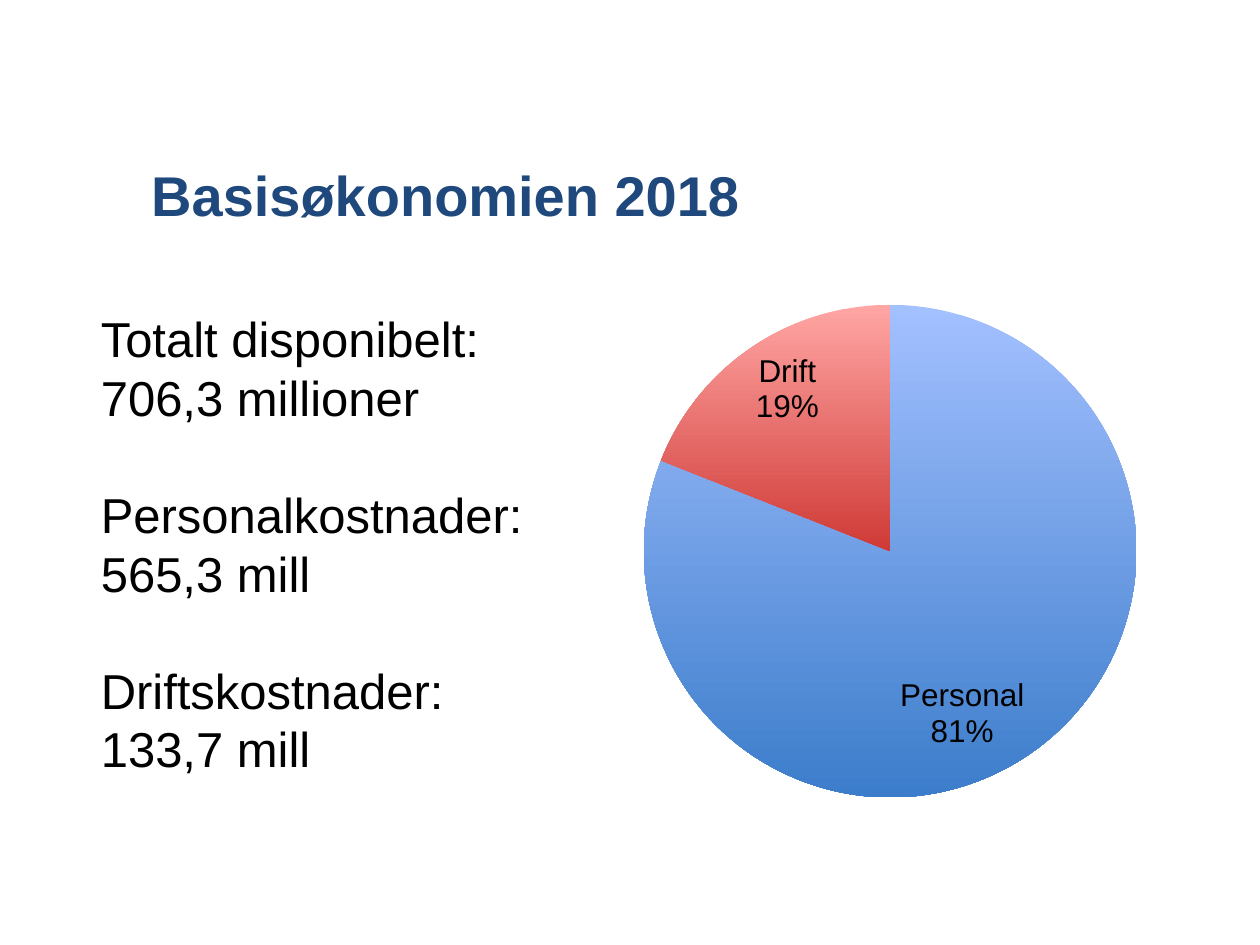
from lxml.etree import SubElement
from pptx import Presentation
from pptx.chart.data import CategoryChartData
from pptx.dml.color import RGBColor
from pptx.enum.chart import XL_CHART_TYPE, XL_LABEL_POSITION
from pptx.enum.text import MSO_ANCHOR, MSO_AUTO_SIZE, PP_ALIGN
from pptx.oxml import parse_xml
from pptx.oxml.ns import nsdecls, qn
from pptx.util import Inches, Pt

NAVY = RGBColor(0x1F, 0x49, 0x7D)
BLACK = RGBColor(0, 0, 0)
BLUES = RGBColor(0xA3, 0xC0, 0xFF), RGBColor(0x3C, 0x7D, 0xCB)
REDS = RGBColor(0xFF, 0xA6, 0xA4), RGBColor(0xCF, 0x3A, 0x36)
FACE = "Arial"
WIDE, HIGH = Inches(10), Inches(7.5)
LINE = Pt(33.5)
COSTS = (
    "Totalt disponibelt: 706,3 millioner",
    "Personalkostnader: 565,3 mill",
    "Driftskostnader: \v133,7 mill",
)


def area(left, top, width, height):
    """Turn shares of the slide's size into lengths."""
    return int(left * WIDE), int(top * HIGH), int(width * WIDE), int(height * HIGH)


def place(shape, box):
    """Move a placeholder to a box."""
    shape.left, shape.top, shape.width, shape.height = box


def style(font, size, color, bold=False):
    """Set the face, size, colour and weight of a font."""
    font.name, font.size, font.bold = FACE, Pt(size), bold
    font.color.rgb = color


def add_title(slide, text, box):
    """Fill the title placeholder."""
    title = slide.shapes.title
    place(title, box)
    frame = title.text_frame
    frame.text = text
    frame.vertical_anchor = MSO_ANCHOR.MIDDLE
    para = frame.paragraphs[0]
    para.alignment = PP_ALIGN.LEFT
    style(para.runs[0].font, 32, NAVY, True)


def add_list(slide, items, box):
    """Fill the body placeholder with unmarked paragraphs a line apart."""
    body = slide.placeholders[1]
    place(body, box)
    frame = body.text_frame
    frame.auto_size = MSO_AUTO_SIZE.NONE
    for row, item in enumerate(items):
        para = frame.add_paragraph() if row else frame.paragraphs[0]
        para.text = item
        para.line_spacing = LINE
        para.space_before = LINE if row else Pt(0)
        props = para._p.get_or_add_pPr()
        props.set("marL", "0")
        props.set("indent", "0")
        SubElement(props, qn("a:buNone"))
        for run in para.runs:
            style(run.font, 28, BLACK)


def set_plot(chart, **shares):
    """Fix the inner plot area as shares of the chart."""
    parts = "".join(f'<c:{key} val="{val}"/>' for key, val in shares.items())
    area_xml = chart._chartSpace.chart.plotArea
    for old in area_xml.findall(qn("c:layout")):
        area_xml.remove(old)
    area_xml.insert(0, parse_xml(
        f'<c:layout {nsdecls("c")}><c:manualLayout><c:layoutTarget val="inner"/>'
        f'<c:xMode val="edge"/><c:yMode val="edge"/>{parts}'
        '</c:manualLayout></c:layout>'))


def add_pie(slide, parts, tones, box):
    """Add a pie with shaded slices and labels inside them."""
    data = CategoryChartData(number_format="#,##0")
    data.categories = list(parts)
    data.add_series("Series 1", list(parts.values()))
    chart = slide.shapes.add_chart(XL_CHART_TYPE.PIE, *box, data).chart
    chart.has_title = chart.has_legend = False
    style(chart.font, 18, BLACK)
    set_plot(chart, x=0.26, y=0.11, w=0.46, h=0.79)
    plot = chart.plots[0]
    plot.vary_by_categories = True
    for slot, pair in enumerate(tones):
        form = plot.series[0].points[slot].format
        form.line.fill.background()
        form.fill.gradient()
        form.fill.gradient_angle = 270
        for stop, tone in zip(form.fill.gradient_stops, pair):
            stop.color.rgb = tone
    plot.has_data_labels = True
    labels = plot.data_labels
    labels.show_category_name = labels.show_percentage = True
    labels.show_value = False
    labels.number_format, labels.number_format_is_linked = "0%", False
    labels.position = XL_LABEL_POSITION.INSIDE_END
    style(labels.font, 18, BLACK)


def main():
    """Build and save the slide."""
    deck = Presentation()
    deck.slide_width, deck.slide_height = WIDE, HIGH
    slide = deck.slides.add_slide(deck.slide_layouts[1])
    add_title(slide, "Basisøkonomien 2018", area(0.11, 0.12, 0.84, 0.17))
    add_pie(slide, {"Personal": 81, "Drift": 19}, (BLUES, REDS),
            area(0.29, 0.25, 0.85, 0.66))
    add_list(slide, COSTS, area(0.07, 0.32, 0.4, 0.52))
    deck.save("out.pptx")


if __name__ == "__main__":
    main()
